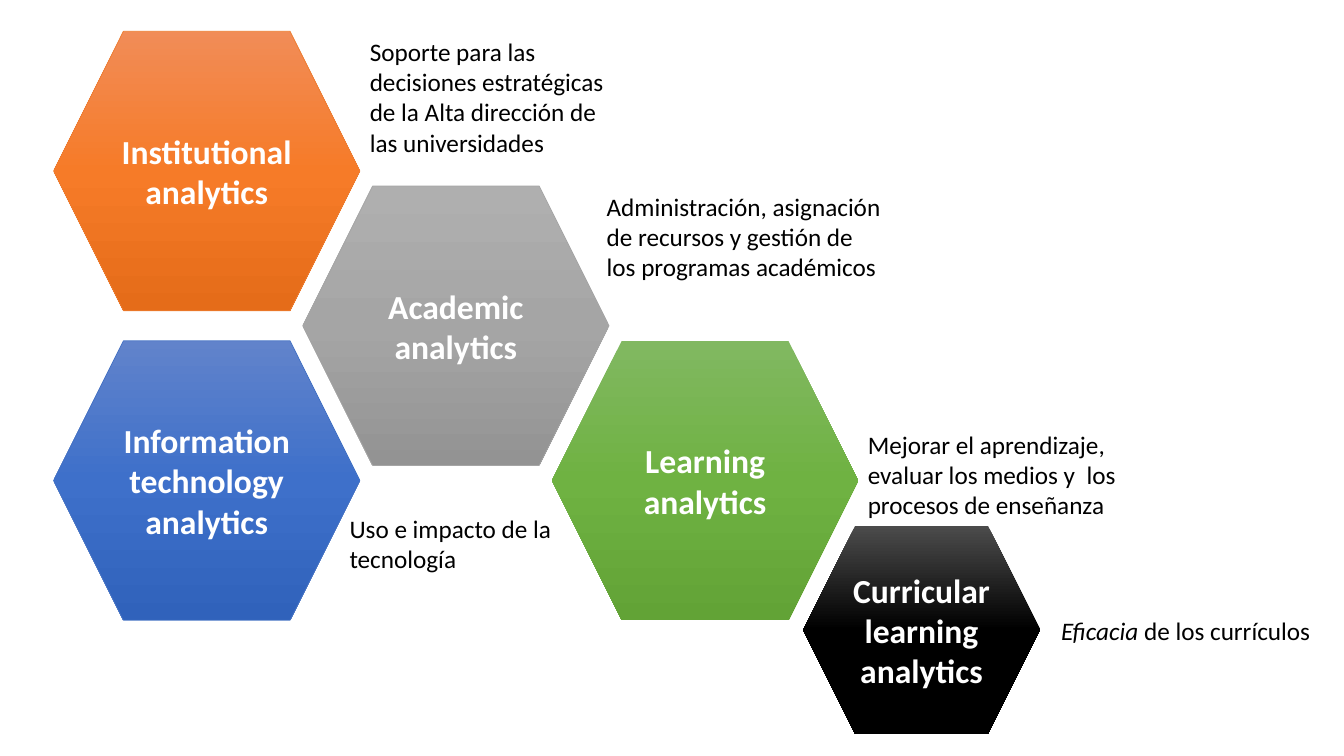
from copy import deepcopy
from pptx import Presentation
from pptx.dml.color import RGBColor
from pptx.enum.shapes import MSO_SHAPE
from pptx.enum.text import MSO_ANCHOR, MSO_AUTO_SIZE, PP_ALIGN
from pptx.util import Cm, Pt

WHITE = RGBColor(0xFF, 0xFF, 0xFF)
BLACK = RGBColor(0x00, 0x00, 0x00)
ORANGE = RGBColor(0xED, 0x7D, 0x31)
ORANGES = [RGBColor(0xF1, 0x8C, 0x57), RGBColor(0xF6, 0x7B, 0x28), RGBColor(0xE5, 0x6C, 0x19)]
GRAY = RGBColor(0xA5, 0xA5, 0xA5)
GRAYS = [RGBColor(0xAF, 0xAF, 0xAF), GRAY, RGBColor(0x93, 0x93, 0x93)]
BLUE = RGBColor(0x44, 0x72, 0xC4)
BLUES = [RGBColor(0x61, 0x83, 0xCB), RGBColor(0x3E, 0x70, 0xCA), RGBColor(0x30, 0x62, 0xBB)]
GREENS = [RGBColor(0x81, 0xB8, 0x61), RGBColor(0x6F, 0xB2, 0x42), RGBColor(0x62, 0xA3, 0x36)]
BLACKS = [RGBColor(0x4B, 0x4B, 0x4B), BLACK, BLACK]

LEFT, TOP = 1.35, 0.79
COLUMN_STEP, ROW_STEP = 6.28, 3.9
LARGE = (7.72, 7.04)
SMALL = (5.97, 5.23)


def add_run(paragraph, text, size, color, bold=None, italic=None):
    run = paragraph.add_run()
    run.text = text
    run.font.name = "Calibri"
    run.font.size = Pt(size)
    run.font.color.rgb = color
    run.font.bold = bold
    run.font.italic = italic


def fill_gradient(fill, colors):
    fill.gradient()
    fill.gradient_angle = 270
    stop_list = fill._fill._gradFill.gsLst
    stop_list.append(deepcopy(stop_list[-1]))
    for stop, position, color in zip(fill.gradient_stops, (0, 0.5, 1), colors):
        stop.position = position
        stop.color.rgb = color


presentation = Presentation()
presentation.slide_width = Cm(33.87)
presentation.slide_height = Cm(19.05)
slide = presentation.slides.add_slide(presentation.slide_layouts[6])

levels = [
    (["Institutional analytics"], (LEFT, TOP), LARGE, ORANGES, ORANGE,
     (9.07, 0.79, 6.43, 3.33),
     [("Soporte para las decisiones estratégicas de la Alta dirección de las universidades", False)]),
    (["Academic", "analytics"], (LEFT + COLUMN_STEP, TOP + ROW_STEP), LARGE, GRAYS, GRAY,
     (15.04, 4.69, 7.44, 2.57),
     [("Administración, asignación de recursos y gestión de los programas académicos", False)]),
    (["Information technology", "analytics"], (LEFT, TOP + 2 * ROW_STEP), LARGE, BLUES, BLUE,
     (8.56, 12.8, 7.44, 1.8),
     [("Uso e impacto de la tecnología", False)]),
    (["Learning", "analytics"], (LEFT + 2 * COLUMN_STEP, TOP + 2 * ROW_STEP), LARGE, GREENS, None,
     (21.62, 10.69, 7.44, 2.57),
     [("Mejorar el aprendizaje, evaluar los medios y  los procesos de enseñanza", False)]),
    (["Curricular learning", "analytics"], (20.24, 13.26), SMALL, BLACKS, None,
     (26.49, 15.37, 6.99, 1.02),
     [("Eficacia ", True), ("de los currículos", False)]),
]

for name_lines, corner, size, gradient, outline, purpose_box, purpose_runs in levels:
    hexagon = slide.shapes.add_shape(MSO_SHAPE.HEXAGON, *map(Cm, corner + size))
    hexagon.shadow.inherit = False
    fill_gradient(hexagon.fill, gradient)
    if outline is None:
        hexagon.line.fill.background()
    else:
        hexagon.line.color.rgb = outline
        hexagon.line.width = Pt(0.5)
    label = hexagon.text_frame
    label.word_wrap = True
    label.vertical_anchor = MSO_ANCHOR.MIDDLE
    for index, line in enumerate(name_lines):
        paragraph = label.add_paragraph() if index else label.paragraphs[0]
        paragraph.alignment = PP_ALIGN.CENTER
        add_run(paragraph, line, 24, WHITE, bold=True)

    purpose = slide.shapes.add_textbox(*map(Cm, purpose_box)).text_frame
    purpose.word_wrap = len(purpose_runs) == 1
    purpose.auto_size = MSO_AUTO_SIZE.SHAPE_TO_FIT_TEXT
    for text, italic in purpose_runs:
        add_run(purpose.paragraphs[0], text, 18, BLACK, italic=italic)

presentation.save("out.pptx")
